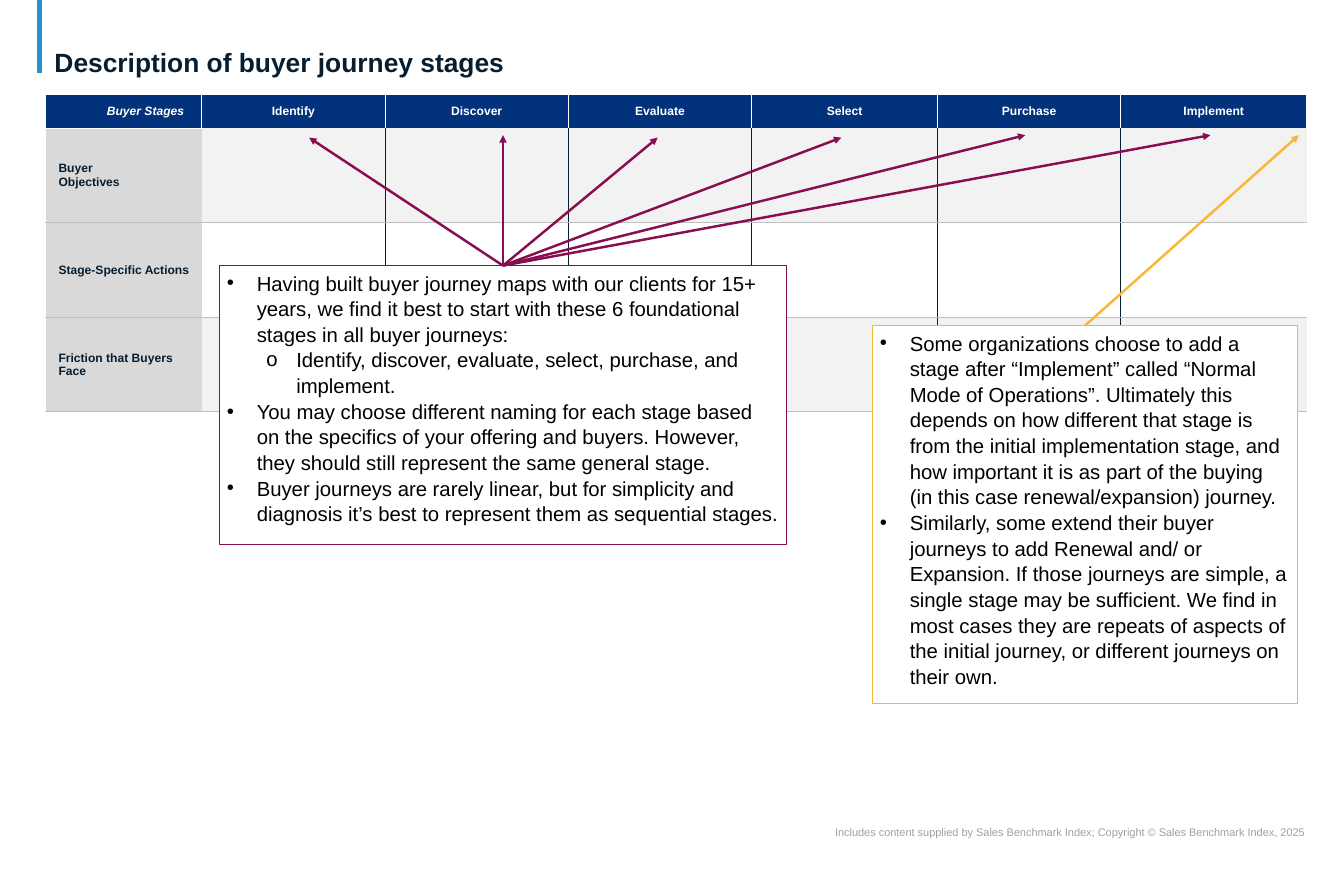
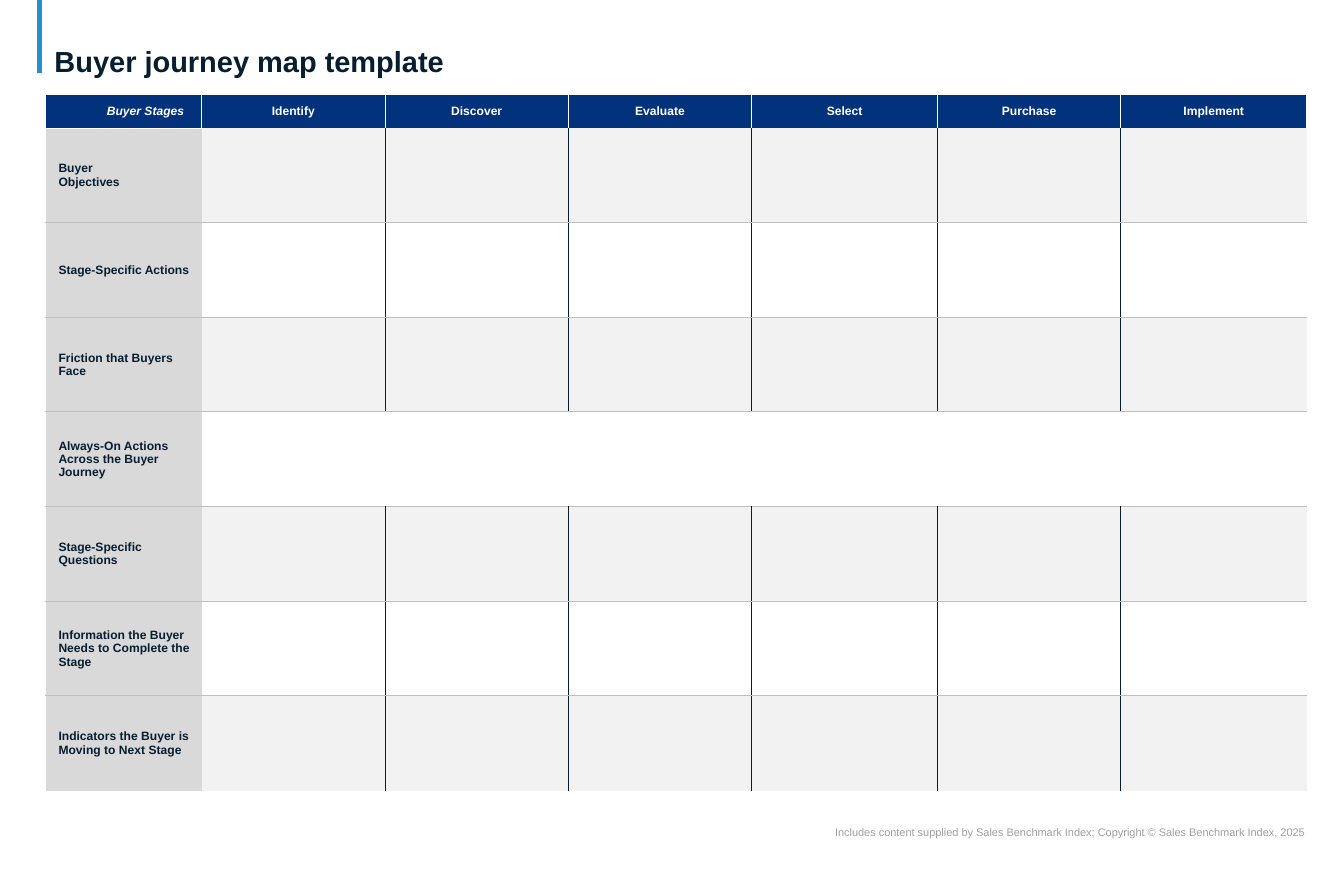
"""Build the two buyer journey slides: stage descriptions and map template."""
from dataclasses import dataclass
from typing import Any, Optional

from lxml.etree import SubElement
from pptx import Presentation
from pptx.dml.color import RGBColor
from pptx.enum.shapes import MSO_CONNECTOR, MSO_SHAPE
from pptx.enum.text import MSO_ANCHOR, MSO_AUTO_SIZE, PP_ALIGN
from pptx.oxml.ns import qn
from pptx.slide import Slide
from pptx.table import _Cell
from pptx.text.text import TextFrame
from pptx.util import Cm, Pt


@dataclass(frozen=True)
class Theme:
    font: str = "Arial"
    ink: RGBColor = RGBColor(0x07, 0x1E, 0x31)
    black: RGBColor = RGBColor(0, 0, 0)
    white: RGBColor = RGBColor(0xFF, 0xFF, 0xFF)
    accent: RGBColor = RGBColor(0x23, 0x91, 0xCF)
    header: RGBColor = RGBColor(0x03, 0x32, 0x7C)
    label: RGBColor = RGBColor(0xD9, 0xD9, 0xD9)
    band: RGBColor = RGBColor(0xF2, 0xF2, 0xF2)
    rule: RGBColor = RGBColor(0xBF, 0xBF, 0xBF)
    footer: RGBColor = RGBColor(0xA0, 0xA0, 0xA0)
    plum: RGBColor = RGBColor(0x88, 0x0E, 0x4F)
    amber: RGBColor = RGBColor(0xF8, 0xB7, 0x37)
    footer_size: float = 10
    table_size: float = 11
    note_size: float = 18.5


THEME = Theme()


@dataclass(frozen=True)
class Bullet:
    text: str
    level: int = 0


@dataclass(frozen=True)
class Note:
    left: float
    top: float
    width: float
    height: float
    color: RGBColor
    bullets: tuple[Bullet, ...]
    targets: tuple[tuple[float, float], ...]


@dataclass(frozen=True)
class JourneySlide:
    title: str
    title_size: float
    labels: tuple[str, ...]
    closing_rule: Optional[RGBColor]
    notes: tuple[Note, ...] = ()


STAGES = ("Identify", "Discover", "Evaluate", "Select", "Purchase", "Implement")
COLUMN_WIDTHS = (5.03, 5.89, 5.89, 5.89, 5.97, 5.89, 5.97)
HEADER_HEIGHT, ROW_HEIGHT = 1.09, 3.04
TABLE_LEFT, TABLE_TOP = 1.45, 3.02
ALWAYS_ON = "Always-On Actions Across the Buyer Journey"
STAGE_LABELS = ("Buyer\vObjectives", "Stage-Specific Actions", "Friction that Buyers Face")
MAP_LABELS = STAGE_LABELS + (
    ALWAYS_ON,
    "Stage-Specific Questions",
    "Information the Buyer Needs to Complete the Stage",
    "Indicators the Buyer is Moving to Next Stage",
)
FOOTER = (
    "Includes content supplied by Sales Benchmark Index; "
    "Copyright © Sales Benchmark Index, 2025"
)
BULLET_MARKS = ("•", "o")
HANGING, LEVEL_STEP = 0.96, 1.27

FOUNDATION_NOTE = Note(
    7.04, 8.53, 18.24, 8.97, THEME.plum,
    (
        Bullet("Having built buyer journey maps with our clients for 15+ years, we "
               "find it best to start with these 6 foundational stages in all buyer journeys:"),
        Bullet("Identify, discover, evaluate, select, purchase, and implement.", 1),
        Bullet("You may choose different naming for each stage based on the specifics of "
               "your offering and buyers. However, they should still represent the same "
               "general stage."),
        Bullet("Buyer journeys are rarely linear, but for simplicity and diagnosis it’s "
               "best to represent them as sequential stages."),
    ),
    ((9.93, 4.42), (16.16, 4.34), (21.13, 4.42), (27.03, 4.42), (32.94, 4.34), (38.89, 4.34)),
)
EXTENSION_NOTE = Note(
    28.02, 10.46, 13.67, 12.12, THEME.amber,
    (
        Bullet("Some organizations choose to add a stage after “Implement” called “Normal "
               "Mode of Operations”. Ultimately this depends on how different that stage is "
               "from the initial implementation stage, and how important it is as part of "
               "the buying (in this case renewal/expansion) journey."),
        Bullet("Similarly, some extend their buyer journeys to add Renewal and/ or "
               "Expansion. If those journeys are simple, a single stage may be sufficient. "
               "We find in most cases they are repeats of aspects of the initial journey, "
               "or different journeys on their own."),
    ),
    ((41.73, 4.34),),
)
SLIDES = (
    JourneySlide("Description of buyer journey stages", 24, STAGE_LABELS, THEME.rule,
                 (FOUNDATION_NOTE, EXTENSION_NOTE)),
    JourneySlide("Buyer journey map template", 26.4, MAP_LABELS, None),
)


def apply_format(target: Any, values: dict[str, Any]) -> None:
    """Set each named attribute on the target."""
    for attribute, value in values.items():
        setattr(target, attribute, value)


def style_text(frame: TextFrame, size: float, color: RGBColor,
               align: PP_ALIGN = PP_ALIGN.LEFT, **emphasis: bool) -> None:
    """Give every paragraph and run in a frame the same look."""
    font_format = {"name": THEME.font, "size": Pt(size), **emphasis}
    for paragraph in frame.paragraphs:
        paragraph.alignment = align
        for run in paragraph.runs:
            apply_format(run.font, font_format)
            run.font.color.rgb = color


def draw_line(slide: Slide, start: tuple[float, float], end: tuple[float, float],
              color: RGBColor, width: float, arrow: bool = False) -> None:
    """Draw a straight line, with an arrowhead at its end if asked."""
    line = slide.shapes.add_connector(
        MSO_CONNECTOR.STRAIGHT, *(Cm(value) for value in start + end))
    line.line.color.rgb = color
    line.line.width = Pt(width)
    properties = line.element.spPr
    if arrow:
        SubElement(properties.find(qn("a:ln")), qn("a:tailEnd"), type="triangle")
    SubElement(properties, qn("a:effectLst"))


def draw_frame(slide: Slide, page: JourneySlide) -> None:
    """Draw the accent bar, the footer and the title."""
    draw_line(slide, (1.27, 0), (1.27, 2.36), THEME.accent, 5)
    footer = slide.shapes.add_textbox(Cm(23.24), Cm(26.52), Cm(18.67), Cm(0.43)).text_frame
    apply_format(footer, {"text": FOOTER, "word_wrap": True, "margin_left": 0,
                          "margin_right": 0, "margin_top": 0, "margin_bottom": 0})
    style_text(footer, THEME.footer_size, THEME.footer, PP_ALIGN.RIGHT)
    title = slide.shapes.title
    apply_format(title, {"left": Cm(1.5), "top": Cm(0.48),
                         "width": Cm(27.99), "height": Cm(2.03)})
    apply_format(title.text_frame, {
        "text": page.title, "word_wrap": True, "auto_size": MSO_AUTO_SIZE.NONE,
        "vertical_anchor": MSO_ANCHOR.BOTTOM, "margin_left": Cm(0.25),
        "margin_right": Cm(0.25), "margin_top": 0, "margin_bottom": 0})
    style_text(title.text_frame, page.title_size, THEME.ink, bold=True)


def set_borders(cell: _Cell, **sides: Optional[RGBColor]) -> None:
    """Set the four cell borders, leaving out those without a colour."""
    properties = cell._tc.get_or_add_tcPr()
    for position, side in enumerate("LRTB"):
        color = sides[side]
        border = SubElement(properties, qn(f"a:ln{side}"), w=str(Pt(1)))
        properties.insert(position, border)
        if color is None:
            SubElement(border, qn("a:noFill"))
        else:
            fill = SubElement(border, qn("a:solidFill"))
            SubElement(fill, qn("a:srgbClr"), val=str(color))


def fill_cell(cell: _Cell, color: RGBColor) -> None:
    """Fill a cell with one colour."""
    cell.fill.solid()
    cell.fill.fore_color.rgb = color


def write_cell(cell: _Cell, text: str, left: float, right: float, vertical: float,
               color: RGBColor, align: PP_ALIGN, italic: bool = False) -> None:
    """Write bold text in a cell with the given margins in centimetres."""
    apply_format(cell, {
        "text": text, "vertical_anchor": MSO_ANCHOR.MIDDLE,
        "margin_left": Cm(left), "margin_right": Cm(right),
        "margin_top": Cm(vertical), "margin_bottom": Cm(vertical)})
    style_text(cell.text_frame, THEME.table_size, color, align, bold=True, italic=italic)


def draw_table(slide: Slide, page: JourneySlide) -> None:
    """Draw the stage table with one row per label."""
    heights = (HEADER_HEIGHT,) + (ROW_HEIGHT,) * len(page.labels)
    graphic = slide.shapes.add_table(
        len(heights), len(COLUMN_WIDTHS), Cm(TABLE_LEFT), Cm(TABLE_TOP),
        Cm(sum(COLUMN_WIDTHS)), Cm(sum(heights)))
    table = graphic.table
    apply_format(table, {"first_row": False, "horz_banding": False})
    for column, width in zip(table.columns, COLUMN_WIDTHS):
        column.width = Cm(width)
    for row, height in zip(table.rows, heights):
        row.height = Cm(height)

    for index, heading in enumerate(("Buyer Stages",) + STAGES):
        cell, corner = table.cell(0, index), index == 0
        margin = 0.56 if corner else 0
        write_cell(cell, heading, margin, margin, 0.23, THEME.white,
                   PP_ALIGN.RIGHT if corner else PP_ALIGN.CENTER, corner)
        fill_cell(cell, THEME.header)
        set_borders(cell, L=THEME.white, R=THEME.white, T=THEME.white,
                    B=THEME.white if corner else None)

    last_column = len(STAGES)
    for row_index, label in enumerate(page.labels, start=1):
        spanned = label == ALWAYS_ON
        above = THEME.rule if row_index > 1 else None
        below = THEME.rule if row_index < len(page.labels) else page.closing_rule
        label_cell = table.cell(row_index, 0)
        write_cell(label_cell, label, 0.43, 0.25, 0.36, THEME.ink, PP_ALIGN.LEFT)
        fill_cell(label_cell, THEME.label)
        set_borders(label_cell, L=THEME.white, R=None, T=above or THEME.white, B=below)
        for column_index in range(1, last_column + 1):
            cell = table.cell(row_index, column_index)
            fill_cell(cell, THEME.band if row_index % 2 else THEME.white)
            set_borders(
                cell, T=above, B=below,
                L=THEME.ink if column_index > 1 and not spanned else None,
                R=THEME.ink if column_index < last_column and not spanned else None)
        if spanned:
            table.cell(row_index, 1).merge(table.cell(row_index, last_column))


def write_bullets(frame: TextFrame, bullets: tuple[Bullet, ...]) -> None:
    """Write bulleted paragraphs with hanging indents."""
    for index, bullet in enumerate(bullets):
        paragraph = frame.add_paragraph() if index else frame.paragraphs[0]
        paragraph.text = bullet.text
        properties = paragraph._p.get_or_add_pPr()
        properties.set("marL", str(Cm(HANGING + LEVEL_STEP * bullet.level)))
        properties.set("indent", str(-Cm(HANGING)))
        mark_color = SubElement(properties, qn("a:buClr"))
        SubElement(mark_color, qn("a:srgbClr"), val=str(THEME.black))
        SubElement(properties, qn("a:buFont"), typeface=THEME.font)
        SubElement(properties, qn("a:buChar"), char=BULLET_MARKS[bullet.level])
        apply_format(paragraph, {"level": bullet.level, "line_spacing": 1.05})
    style_text(frame, THEME.note_size, THEME.black)


def draw_note(slide: Slide, note: Note) -> None:
    """Draw a note box and the arrows from its top to the stages."""
    box = slide.shapes.add_shape(
        MSO_SHAPE.RECTANGLE, Cm(note.left), Cm(note.top), Cm(note.width), Cm(note.height))
    box.shadow.inherit = False
    box.fill.solid()
    box.fill.fore_color.rgb = THEME.white
    box.line.color.rgb = note.color
    box.line.width = Pt(0.75)
    apply_format(box.text_frame, {"word_wrap": True, "vertical_anchor": MSO_ANCHOR.TOP})
    write_bullets(box.text_frame, note.bullets)
    origin = (note.left + note.width / 2, note.top)
    for target in note.targets:
        draw_line(slide, origin, target, note.color, 2.25, arrow=True)


def main() -> None:
    """Build and save the presentation."""
    presentation = Presentation()
    apply_format(presentation, {"slide_width": Cm(43.18), "slide_height": Cm(27.94)})
    title_only = presentation.slide_layouts[5]
    for page in SLIDES:
        slide = presentation.slides.add_slide(title_only)
        draw_frame(slide, page)
        draw_table(slide, page)
        for note in page.notes:
            draw_note(slide, note)
    presentation.save("out.pptx")


if __name__ == "__main__":
    main()
